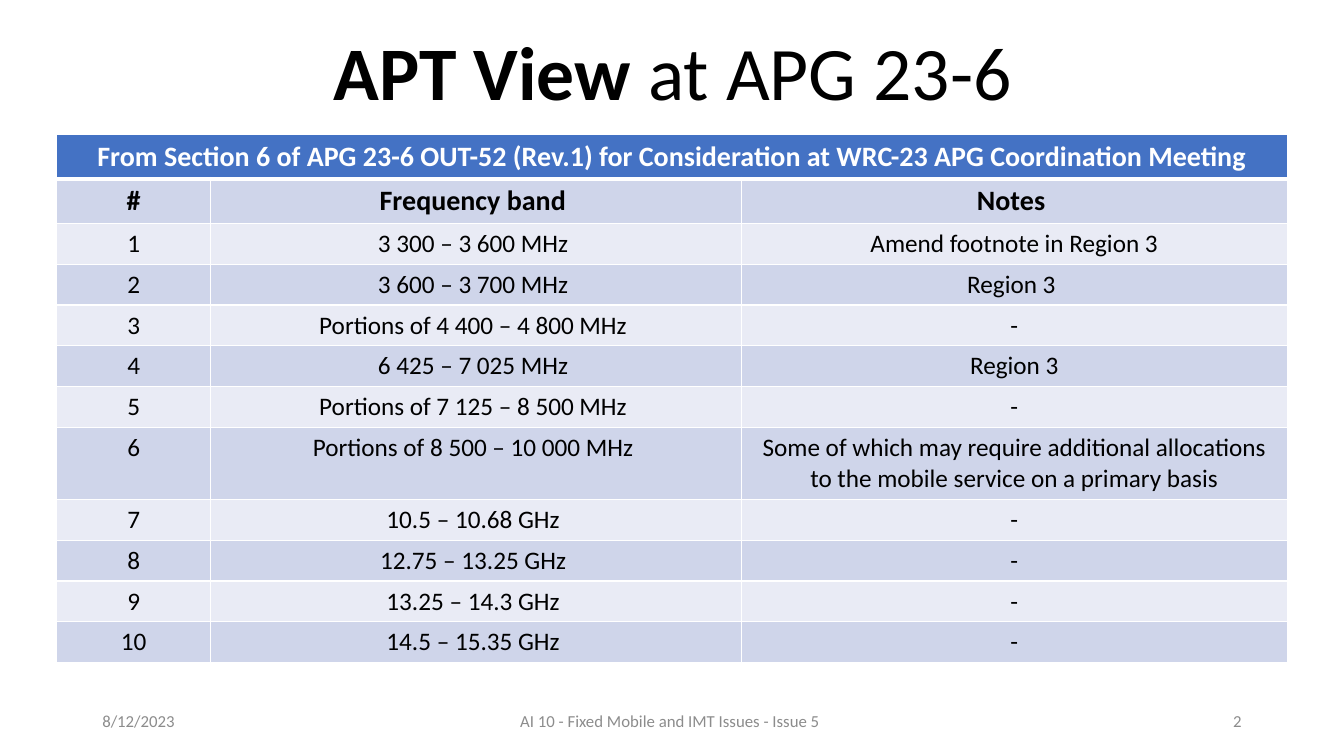
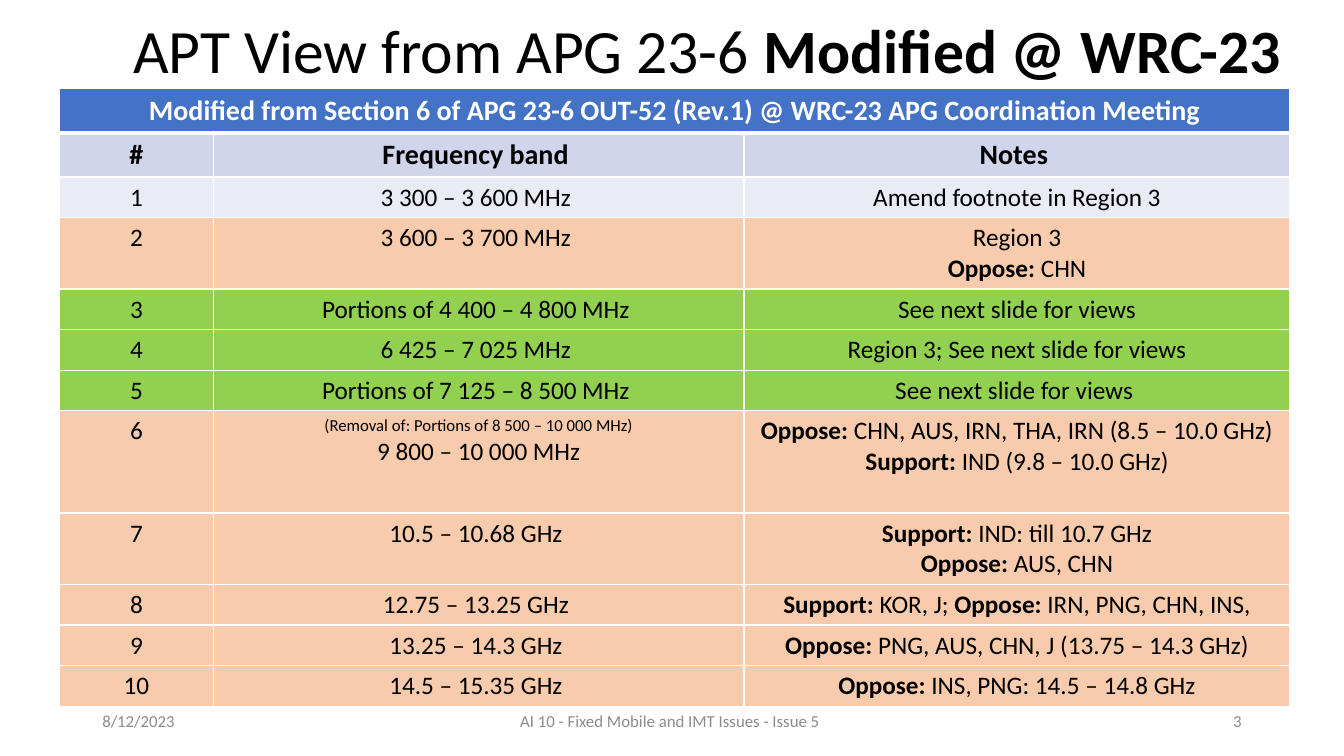
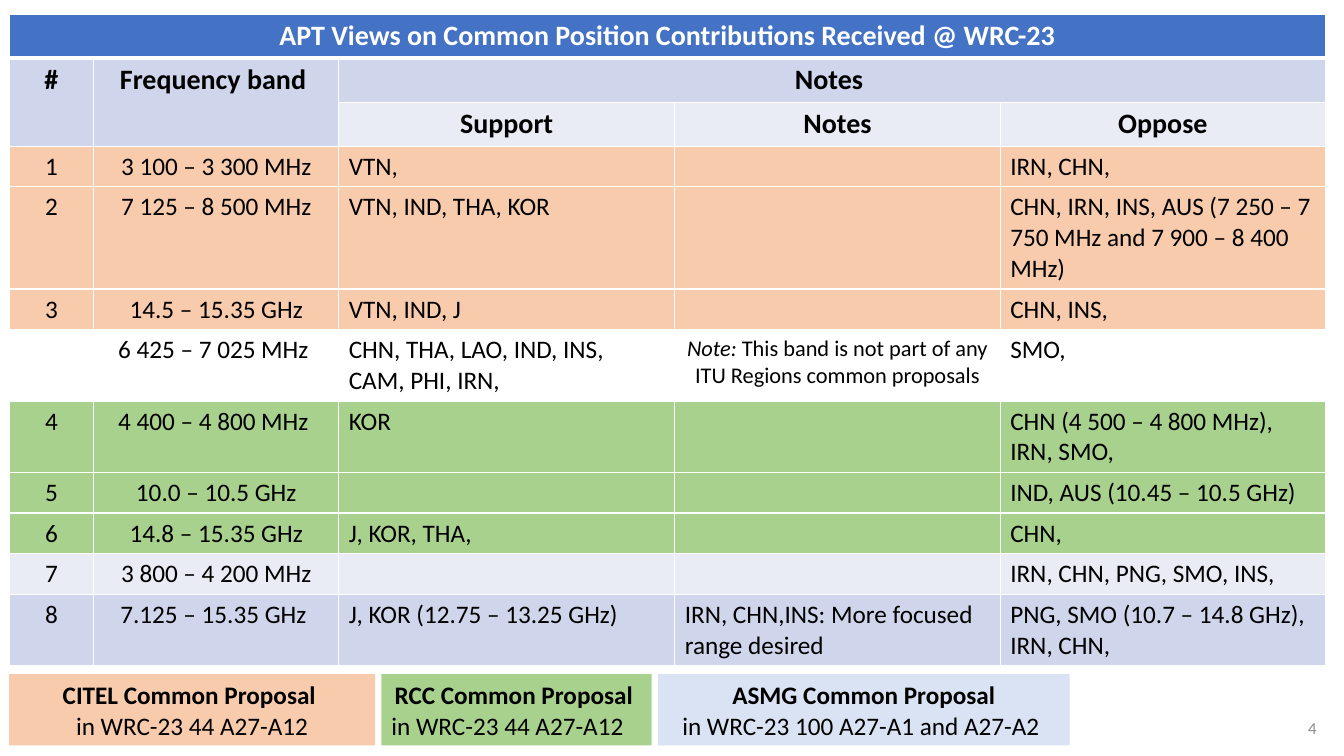
from dataclasses import dataclass
from itertools import cycle
from typing import Any

from lxml.etree import SubElement
from pptx import Presentation
from pptx.dml.color import RGBColor as Color
from pptx.enum.shapes import MSO_SHAPE as Shape
from pptx.enum.text import MSO_ANCHOR as Anchor, PP_ALIGN as Align
from pptx.oxml.ns import qn
from pptx.slide import Slide
from pptx.util import Pt


# Theme
@dataclass(frozen=True)
class Theme:
    font: str = "Calibri"
    black: str = "000000"
    white: str = "FFFFFF"
    grey: str = "8C8C8C"
    blue: str = "4472C4"
    band_dark: str = "CFD5EA"
    band_light: str = "E9EBF5"
    peach: str = "F8CBAD"
    lime: str = "92D050"
    green: str = "A9D18E"
    ice: str = "DAE3F3"
    head_size: float = 20
    body_size: float = 18
    note_size: float = 16
    small_size: float = 12
    rule: float = 1
    head_rule: float = 3


THEME = Theme()
HEAD_HEIGHT = 31.5
ROW_HEIGHT = 29
LINE_HEIGHT = 22


# Content records
@dataclass(frozen=True)
class Span:
    text: str
    bold: bool = False
    italic: bool = False
    size: float | None = None


@dataclass(frozen=True)
class Para:
    spans: tuple[Span, ...]
    align: Align | None = None


Text = str | tuple[Para, ...]


@dataclass(frozen=True)
class Row:
    cells: tuple[Text, ...]
    fill: str | None
    lines: int = 1


@dataclass(frozen=True)
class Box:
    left: float
    top: float
    width: float
    height: float

    def lengths(self) -> tuple[Pt, ...]:
        return tuple(Pt(n) for n in (self.left, self.top, self.width, self.height))


@dataclass(frozen=True)
class Grid:
    left: float
    top: float
    columns: tuple[float, ...]
    heads: tuple[Row, ...]
    rows: tuple[Row, ...]
    merges: tuple[tuple[int, int, int, int], ...]
    centred_columns: int


@dataclass(frozen=True)
class Legend:
    text: Text
    width: float
    fill: str


# Text helpers
def marked(text: str) -> tuple[Para, ...]:
    """Split lines into paragraphs; words between asterisks are bold."""
    return tuple(
        Para(tuple(Span(part, bold=i % 2 == 1)
                   for i, part in enumerate(line.split("*")) if part))
        for line in text.split("\n"))


def apply_formats(target: Any, formats: dict[str, Any]) -> None:
    for name, value in formats.items():
        setattr(target, name, value)


def write(frame: Any, text: Text, size: float, color: str = THEME.black,
          align: Align = Align.CENTER, bold: bool = False) -> None:
    paras = marked(text) if isinstance(text, str) else text
    for index, item in enumerate(paras):
        para = frame.paragraphs[0] if index == 0 else frame.add_paragraph()
        para.alignment = item.align or align
        for span in item.spans:
            run = para.add_run()
            run.text = span.text
            apply_formats(run.font, {
                "name": THEME.font, "size": Pt(span.size or size),
                "bold": bold or span.bold, "italic": span.italic})
            run.font.color.rgb = Color.from_string(color)


def add_text(page: Slide, box: Box, text: str, size: float,
             color: str = THEME.black, align: Align = Align.CENTER,
             anchor: Anchor = Anchor.TOP) -> None:
    frame = page.shapes.add_textbox(*box.lengths()).text_frame
    apply_formats(frame, {"word_wrap": True, "vertical_anchor": anchor})
    write(frame, text, size, color, align)


def add_footer(page: Slide, box: Box, text: str, align: Align) -> None:
    add_text(page, box, text, THEME.small_size, THEME.grey, align, Anchor.MIDDLE)


def add_footers(page: Slide, number: str) -> None:
    top, height = 500.5, 29
    for left, width, text, align in (
            (66, 216, "8/12/2023", Align.LEFT),
            (318, 324, "AI 10 - Fixed Mobile and IMT Issues - Issue 5 ", Align.CENTER),
            (678, 216, number, Align.RIGHT)):
        add_footer(page, Box(left, top, width, height), text, align)


# Tables
def set_borders(cell: Any, top: float, bottom: float) -> None:
    properties = cell._tc.get_or_add_tcPr()
    widths = {"lnL": THEME.rule, "lnR": THEME.rule, "lnT": top, "lnB": bottom}
    for index, (tag, width) in enumerate(widths.items()):
        line = SubElement(properties, qn(f"a:{tag}"), w=str(int(Pt(width))))
        fill = SubElement(line, qn("a:solidFill"))
        SubElement(fill, qn("a:srgbClr"), val=THEME.white)
        properties.insert(index, line)


def add_grid(page: Slide, grid: Grid) -> None:
    rows = grid.heads + grid.rows
    head_count = len(grid.heads)
    heights = [HEAD_HEIGHT] * head_count + [
        ROW_HEIGHT + LINE_HEIGHT * (row.lines - 1) for row in grid.rows]
    box = Box(grid.left, grid.top, sum(grid.columns), sum(heights))
    table = page.shapes.add_table(len(rows), len(grid.columns), *box.lengths()).table
    apply_formats(table, {"first_row": False, "horz_banding": False})
    for column, width in zip(table.columns, grid.columns):
        column.width = Pt(width)

    for r, row in enumerate(rows):
        table.rows[r].height = Pt(heights[r])
        is_head = r < head_count
        for c in range(len(grid.columns)):
            cell = table.cell(r, c)
            if row.fill:
                cell.fill.solid()
                cell.fill.fore_color.rgb = Color.from_string(row.fill)
            else:
                cell.fill.background()
            set_borders(cell, THEME.head_rule if r == 1 else THEME.rule,
                        THEME.head_rule if r == 0 else THEME.rule)
            if c < len(row.cells) and row.cells[c]:
                centred = is_head or c < grid.centred_columns
                write(cell.text_frame, row.cells[c],
                      THEME.head_size if is_head else THEME.body_size,
                      THEME.white if r == 0 else THEME.black,
                      Align.CENTER if centred else Align.LEFT, is_head)
    for r1, c1, r2, c2 in grid.merges:
        table.cell(r1, c1).merge(table.cell(r2, c2))


def band_grid(left: float, top: float, heading: str, rows: tuple[Row, ...]) -> Grid:
    heads = (Row((heading,), THEME.blue),
             Row(("#", "Frequency band ", "Notes "), THEME.band_dark))
    return Grid(left, top, (110, 379, 390), heads, rows, ((0, 0, 0, 2),), 3)


# Legend
def add_legends(page: Slide, legends: tuple[Legend, ...]) -> None:
    left, gap = 6.5, 4.5
    for legend in legends:
        box = Box(left, 481.5, legend.width, 51)
        shape = page.shapes.add_shape(Shape.RECTANGLE, *box.lengths())
        shape.shadow.inherit = False
        shape.fill.solid()
        shape.fill.fore_color.rgb = Color.from_string(legend.fill)
        shape.line.fill.background()
        shape.text_frame.word_wrap = True
        write(shape.text_frame, legend.text, THEME.body_size)
        left += legend.width + gap


# Slide content
BANDS = ("3 300 – 3 600 MHz ", "3 600 – 3 700 MHz ", "Portions of 4 400 – 4 800 MHz ",
         "6 425 – 7 025 MHz ", "Portions of 7 125 – 8 500 MHz ",
         "Portions of 8 500 – 10 000 MHz ", "10.5 – 10.68 GHz ",
         "12.75 – 13.25 GHz ", "13.25 – 14.3 GHz ", "14.5 – 15.35 GHz ")

VIEW_NOTES = (
    "Amend footnote in Region 3", "Region 3 ", "-", "Region 3", "-",
    "Some of which may require additional allocations to the mobile service on a primary basis",
    "-", "-", "-", "-")

REMOVED_BAND = (
    Para((Span("(Removal of: Portions of 8 500 – 10 000 MHz)", size=THEME.small_size),)),
    Para((Span("9 800 – 10 000 MHz"),)))

MODIFIED = (
    ("Amend footnote in Region 3", THEME.band_light, 1),
    ("Region 3\n*Oppose: *CHN", THEME.peach, 2),
    ("See next slide for views", THEME.lime, 1),
    ("Region 3; See next slide for views", THEME.lime, 1),
    ("See next slide for views ", THEME.lime, 1),
    ("*Oppose: *CHN, AUS, IRN, THA, IRN (8.5 – 10.0 GHz)\n*Support: *IND (9.8 – 10.0 GHz)",
     THEME.peach, 3),
    ("*Support: *IND: till 10.7 GHz\n*Oppose: *AUS, CHN", THEME.peach, 2),
    ("*Support: *KOR, J; *Oppose: *IRN, PNG, CHN, INS,", THEME.peach, 1),
    ("*Oppose: *PNG, AUS, CHN, J (13.75 – 14.3 GHz)", THEME.peach, 1),
    ("*Oppose: *INS, PNG: 14.5 – 14.8 GHz", THEME.peach, 1))

PROPOSAL_NOTE = (Para((
    Span("Note: ", italic=True, size=THEME.note_size),
    Span("This band is not part of any ITU Regions common proposals", size=THEME.note_size),
), Align.CENTER),)

POSITION_HEADS = (
    Row(("APT Views on Common Position Contributions Received @ WRC-23",), THEME.blue),
    Row(("#", "Frequency band ", "Notes "), THEME.band_dark),
    Row(("", "", "Support", "Notes", "Oppose"), THEME.band_light))

POSITIONS = (
    Row(("1", "3 100 – 3 300 MHz", "VTN,", "", "IRN, CHN,"), THEME.peach),
    Row(("2", "7 125 – 8 500 MHz", "VTN, IND, THA, KOR", "",
         "CHN, IRN, INS, AUS (7 250 – 7 750 MHz and 7 900 – 8 400 MHz)"), THEME.peach, 3),
    Row(("3", "14.5 – 15.35 GHz", "VTN, IND, J", "", "CHN, INS,"), THEME.peach),
    Row(("", "6 425 – 7 025 MHz ", "CHN, THA, LAO, IND, INS, CAM, PHI, IRN,",
         PROPOSAL_NOTE, "SMO,"), None, 2),
    Row(("4", "4 400 – 4 800 MHz ", "KOR", "", "CHN (4 500 – 4 800 MHz), IRN, SMO,"),
        THEME.green, 2),
    Row(("5", "10.0 – 10.5 GHz", "", "", "IND, AUS (10.45 – 10.5 GHz)"), THEME.green),
    Row(("6", "14.8 – 15.35 GHz", "J, KOR, THA,", "", "CHN,"), THEME.green),
    Row(("7", "3 800 – 4 200 MHz", "", "", "IRN, CHN, PNG, SMO, INS,"), THEME.band_light),
    Row(("8", "7.125 – 15.35 GHz ", "J, KOR (12.75 – 13.25 GHz)",
         "IRN, CHN,INS: More focused range desired",
         "PNG, SMO (10.7 – 14.8 GHz), IRN, CHN,"), THEME.band_dark, 2))

LEGENDS = (
    Legend("*CITEL Common Proposal *\nin WRC-23 44 A27-A12", 261.5, THEME.peach),
    Legend((Para((Span("RCC Common Proposal ", bold=True),)),
            Para((Span("in WRC-23 44 A27-A12"),), Align.LEFT)), 193, THEME.green),
    Legend("*ASMG Common Proposal*\nin WRC-23 100 A27-A1 and A27-A2 ", 294, THEME.ice))


# Slides
def build_view(page: Slide) -> None:
    fills = cycle((THEME.band_light, THEME.band_dark))
    rows = tuple(
        Row((str(n), band, note), fill, 2 if note == VIEW_NOTES[5] else 1)
        for n, (band, note, fill) in enumerate(zip(BANDS, VIEW_NOTES, fills), 1))
    add_grid(page, band_grid(
        40.5, 96, "From Section 6 of APG 23-6 OUT-52 (Rev.1) for Consideration "
        "at WRC-23 APG Coordination Meeting", rows))
    add_footers(page, "2")
    add_text(page, Box(222, 14.5, 517, 73), "*APT View *at APG 23-6", 54)


def build_modified(page: Slide) -> None:
    bands = BANDS[:5] + (REMOVED_BAND,) + BANDS[6:]
    rows = tuple(
        Row((str(n), band, note), fill, lines)
        for n, (band, (note, fill, lines)) in enumerate(zip(bands, MODIFIED), 1))
    add_grid(page, band_grid(
        42.5, 63.5, "Modified from Section 6 of APG 23-6 OUT-52 (Rev.1) "
        "@ WRC-23 APG Coordination Meeting", rows))
    add_footers(page, "3")
    add_text(page, Box(-36.5, 5, 1083.5, 60.5),
             "APT View from APG 23-6 *Modified @ WRC-23*", 44)


def build_positions(page: Slide) -> None:
    add_footer(page, Box(731.5, 505.5, 216, 29), "4", Align.RIGHT)
    add_grid(page, Grid(
        6.5, 10, (60.5, 175, 240, 232.5, 232.5), POSITION_HEADS, POSITIONS,
        ((0, 0, 0, 4), (1, 0, 2, 0), (1, 1, 2, 1), (1, 2, 1, 4)), 2))
    add_legends(page, LEGENDS)


def main() -> None:
    deck = Presentation()
    apply_formats(deck, {"slide_width": Pt(960), "slide_height": Pt(540)})
    for build in (build_view, build_modified, build_positions):
        build(deck.slides.add_slide(deck.slide_layouts[6]))
    deck.save("out.pptx")


if __name__ == "__main__":
    main()
